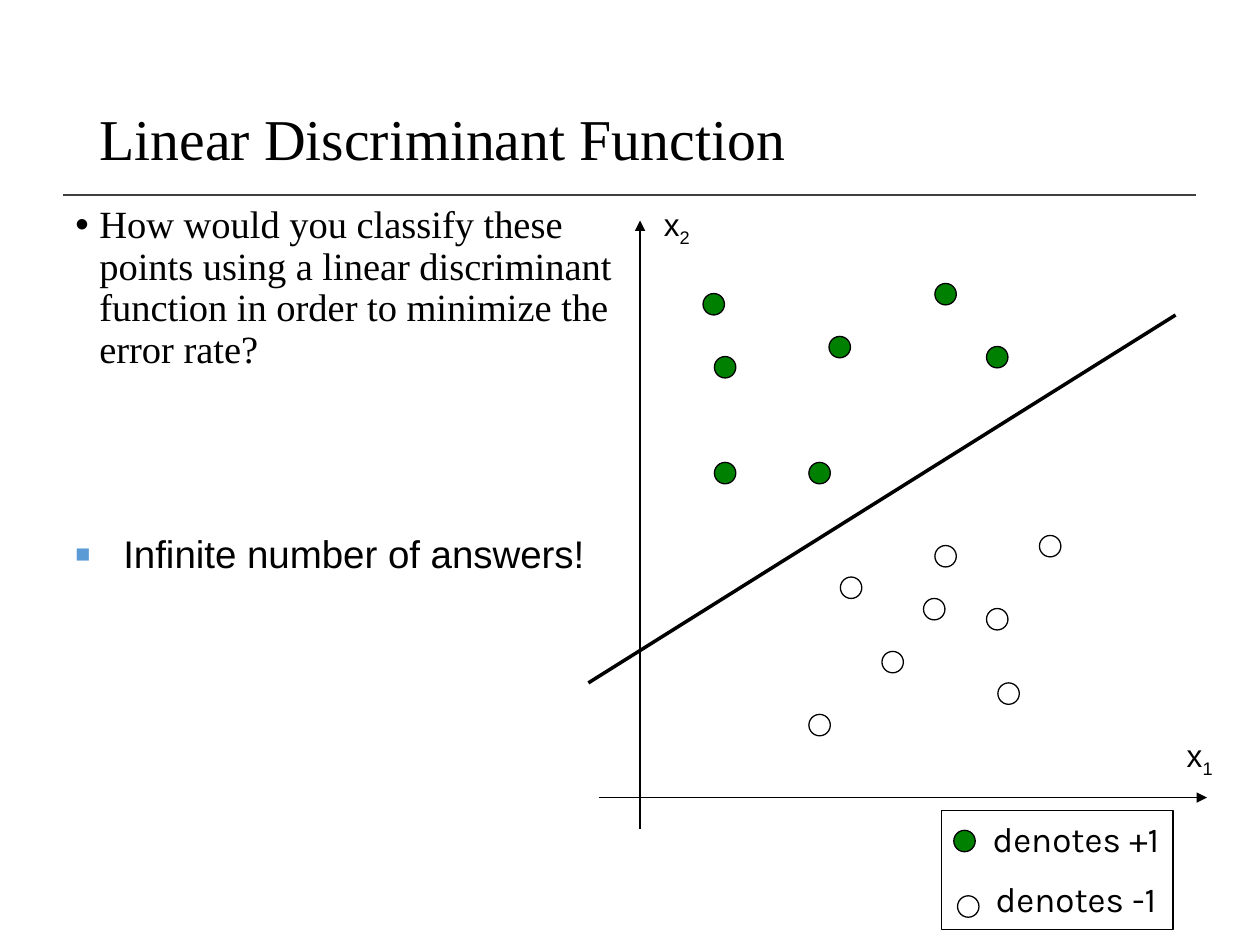
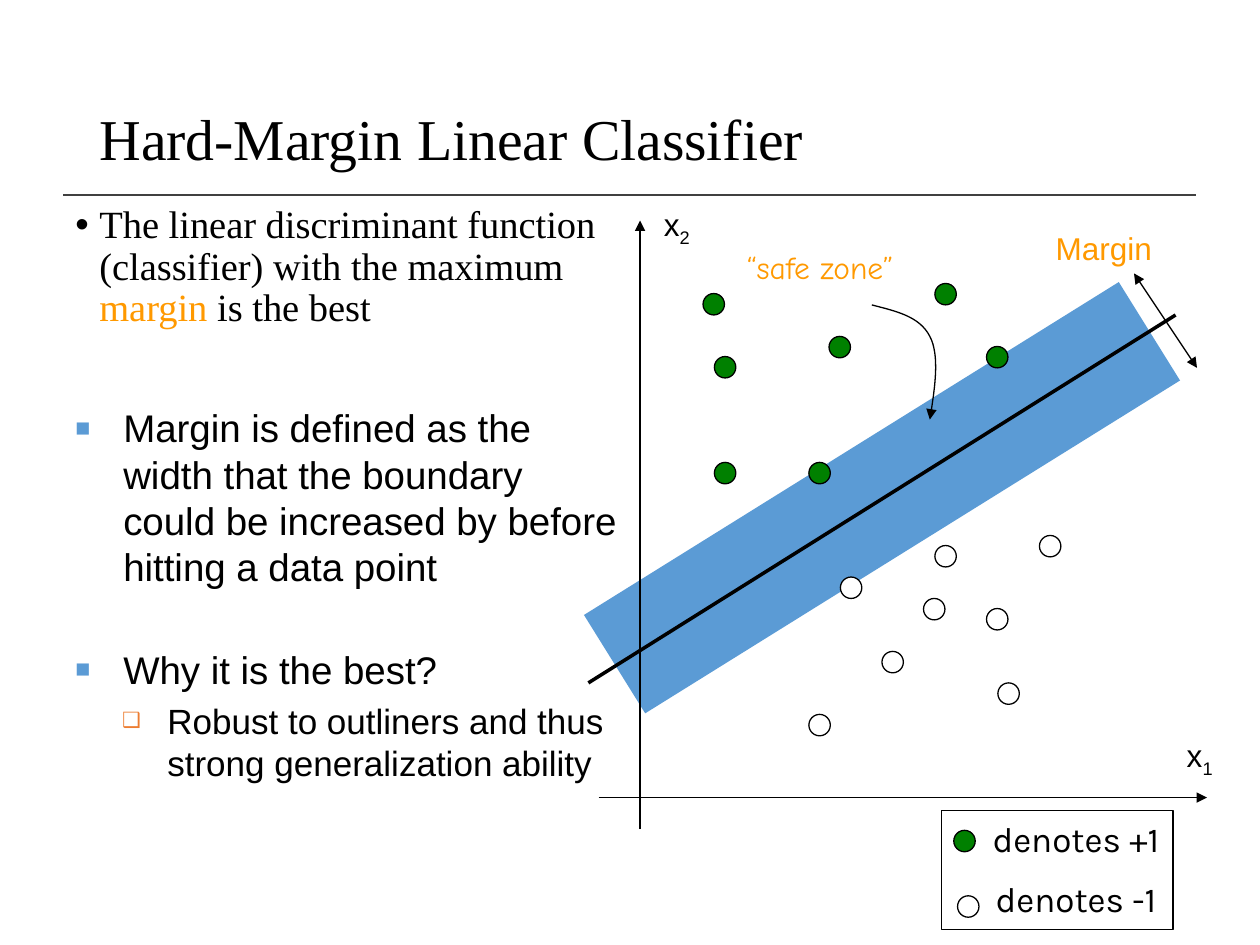
from lxml.etree import SubElement
from pptx import Presentation
from pptx.dml.color import RGBColor
from pptx.enum.shapes import MSO_CONNECTOR, MSO_SHAPE
from pptx.enum.text import MSO_ANCHOR, MSO_AUTO_SIZE, PP_ALIGN
from pptx.oxml.ns import qn
from pptx.util import Inches, Pt

BLACK, WHITE, GREEN = "000000", "FFFFFF", "008000"
BLUE, ORANGE, RUST, GREY = "5B9BD5", "FF9900", "ED7D31", "404040"

TITLE = {"name": "Times New Roman", "size": 33}
BODY = {"name": "Times New Roman", "size": 22}
POINT = {"name": "Arial", "size": 22}
SUBPOINT = {"name": "Arial", "size": 20}
LABEL = {"name": "Arial", "size": 18}
NOTE = {"name": "Comic Neue", "size": 18}
LEGEND = {"name": "Karla", "size": 20}

# Bullet styles: sign, colour, size in percent, left margin, hanging indent
DOT = ("•", BLACK, 100, 0.19, 0.19)
SQUARE = ("■", BLUE, 65, 0.38, 0.38)
HOLLOW = ("❑", RUST, 60, 0.73, 0.36)

DOT_SIZE = 0.17
NEGATIVE = [(6.67, 4.58), (7.42, 4.33), (7.33, 4.75), (7.83, 4.83),
            (8.25, 4.25), (7, 5.17), (6.42, 5.67), (7.92, 5.42)]
POSITIVE = [(5.58, 2.33), (5.67, 2.83), (6.58, 2.67), (5.67, 3.67),
            (6.42, 3.67), (7.42, 2.25), (7.83, 2.75)]
SAFE_ZONE_CURVE = [[(6.92, 2.42), (7.11, 2.47), (7.3, 2.51), (7.38, 2.67)],
                   [(7.38, 2.67), (7.46, 2.82), (7.42, 3.08), (7.38, 3.33)]]


def color(value):
    return RGBColor.from_string(value)


def bezier(points, t):
    """Return the place at t (0 to 1) on a cubic curve with four control points."""
    weights = ((1 - t) ** 3, 3 * t * (1 - t) ** 2, 3 * t * t * (1 - t), t ** 3)
    return tuple(Inches(sum(w * p[axis] for w, p in zip(weights, points)))
                 for axis in (0, 1))


class Page:
    def __init__(self, deck, title):
        self.shapes = deck.slides.add_slide(deck.slide_layouts[6]).shapes
        self.line((0.5, 1.55), (9.49, 1.55), 1, GREY)
        frame = self.text_box(0.69, 0.4, 8.62, 1.45)
        frame.vertical_anchor = MSO_ANCHOR.MIDDLE
        self.para(frame, [(title, {})], TITLE, line_spacing=0.9)

    def text_box(self, left, top, width, height, wrap=True):
        box = self.shapes.add_textbox(*map(Inches, (left, top, width, height)))
        frame = box.text_frame
        frame.word_wrap = wrap
        if not wrap:
            frame.auto_size = MSO_AUTO_SIZE.SHAPE_TO_FIT_TEXT
        return frame

    def para(self, frame, spans, style, bullet=None, **formats):
        """Fill the first empty paragraph or add one; spans are (text, changes)."""
        first = frame.paragraphs[0]
        para = frame.add_paragraph() if first.runs else first
        for key, value in formats.items():
            setattr(para, key, value)
        for text, changes in spans:
            span = para.add_run()
            span.text = text
            look = {**style, "color": BLACK, **changes}
            span.font.color.rgb = color(look.pop("color"))
            span.font.size = Pt(look.pop("size"))
            baseline = look.pop("baseline", None)
            if baseline:
                span.font._element.set("baseline", baseline)
            for key, value in look.items():
                setattr(span.font, key, value)
        if bullet:
            self.bullet(para, *bullet)

    def bullet(self, para, sign, shade, percent, margin, hanging):
        props = para._p.get_or_add_pPr()
        props.set("marL", str(Inches(margin)))
        props.set("indent", str(-Inches(hanging)))
        tint = SubElement(props, qn("a:buClr"))
        SubElement(tint, qn("a:srgbClr"), val=shade)
        SubElement(props, qn("a:buSzPct"), val=str(percent * 1000))
        SubElement(props, qn("a:buFont"), typeface="Arial")
        SubElement(props, qn("a:buChar"), char=sign)

    def body(self, spans, width, height):
        frame = self.text_box(0.5, 1.58, width, height)
        self.para(frame, spans, BODY, DOT, line_spacing=0.9, space_before=Pt(7.5))

    def point(self, top, width, height, text, subpoint=None):
        frame = self.text_box(0.5, top, width, height)
        self.para(frame, [(text, {})], POINT, SQUARE, space_before=Pt(4.4))
        if subpoint:
            self.para(frame, [(subpoint, {})], SUBPOINT, HOLLOW,
                      level=1, space_before=Pt(4))

    def label(self, left, top, width, spans, style=LABEL):
        self.para(self.text_box(left, top, width, 0.4, wrap=False), spans, style)

    def arrowheads(self, shape, ends):
        for end in ends:
            SubElement(shape.line._get_or_add_ln(), qn(f"a:{end}"), type="triangle")

    def line(self, start, end, weight, shade=BLACK, ends=()):
        link = self.shapes.add_connector(
            MSO_CONNECTOR.STRAIGHT, *map(Inches, start + end))
        link.line.color.rgb = color(shade)
        link.line.width = Pt(weight)
        self.arrowheads(link, ends)
        SubElement(link._element.spPr, qn("a:effectLst"))

    def shape(self, kind, left, top, width, height, fill=None, outline=BLACK):
        shape = self.shapes.add_shape(kind, *map(Inches, (left, top, width, height)))
        self.paint(shape, fill, outline)
        return shape

    def paint(self, shape, fill, outline):
        shape.shadow.inherit = False
        if fill:
            shape.fill.solid()
            shape.fill.fore_color.rgb = color(fill)
        else:
            shape.fill.background()
        if outline:
            shape.line.color.rgb = color(outline)
            shape.line.width = Pt(0.75)
        else:
            shape.line.fill.background()

    def curved_arrow(self, curves, steps=16):
        points = [bezier(curve, step / steps)
                  for curve in curves for step in range(steps + 1)]
        builder = self.shapes.build_freeform(*points[0])
        builder.add_line_segments(points[1:], close=False)
        arrow = builder.convert_to_shape()
        self.paint(arrow, None, BLACK)
        self.arrowheads(arrow, ["tailEnd"])

    def data_dot(self, left, top, fill):
        self.shape(MSO_SHAPE.OVAL, left, top, DOT_SIZE, DOT_SIZE, fill)

    def plot(self):
        """Draw the axes, both classes, the boundary and the legend."""
        self.line((4.75, 6.33), (9.58, 6.33), 1, ends=["tailEnd"])
        self.line((5.08, 6.58), (5.08, 1.75), 1, ends=["tailEnd"])
        for places, fill in ((NEGATIVE, WHITE), (POSITIVE, GREEN)):
            for left, top in places:
                self.data_dot(left, top, fill)
        self.line((4.67, 5.42), (9.33, 2.5), 2)
        for left, top, index in ((9.32, 5.79, "1"), (5.17, 1.58, "2")):
            self.label(left, top, 0.42, [("x", {}), (index, {"baseline": "-25000"})])
        frame = self.text_box(7.5, 6.44, 2.08, 0.93)
        for text in ("denotes +1", "denotes -1"):
            self.para(frame, [(text, {})], LEGEND,
                      alignment=PP_ALIGN.CENTER, space_before=Pt(10))
        self.data_dot(7.6, 7.11, WHITE)
        self.data_dot(7.57, 6.59, GREEN)
        self.shape(MSO_SHAPE.RECTANGLE, 7.47, 6.43, 1.84, 0.95)


def discriminant_page(deck):
    page = Page(deck, "Linear Discriminant Function")
    page.body([("How would you classify these points using a linear discriminant "
                "function in order to minimize the error rate?", {})], 4.52, 1.76)
    page.plot()
    page.point(4.16, 4.25, 0.59, "Infinite number of answers!")


def margin_page(deck):
    page = Page(deck, "Hard-Margin Linear Classifier")
    band = page.shape(MSO_SHAPE.RECTANGLE, 4.5, 3.49, 5, 0.92, BLUE, None)
    band.rotation = 328.1
    page.plot()
    page.curved_arrow(SAFE_ZONE_CURVE)
    page.label(5.83, 1.92, 1.52, [("“safe zone”", {"color": ORANGE})], NOTE)
    page.body([("The linear discriminant function (classifier) with the maximum ", {}),
               ("margin", {"color": ORANGE}), (" is the best", {})], 4.42, 1.34)
    page.point(3.16, 4.52, 1.59, "Margin is defined as the width that the boundary "
               "could be increased by before hitting a data point")
    page.point(5.08, 4.52, 1.59, "Why it is the best?",
               "Robust to outliners and thus strong generalization ability")
    page.line((9, 2.17), (9.5, 2.92), 0.75, ends=["headEnd", "tailEnd"])
    page.label(8.28, 1.77, 0.97, [("Margin", {"color": ORANGE})])


def main():
    deck = Presentation()
    deck.slide_width, deck.slide_height = Inches(10), Inches(7.5)
    discriminant_page(deck)
    margin_page(deck)
    deck.save("out.pptx")


if __name__ == "__main__":
    main()
